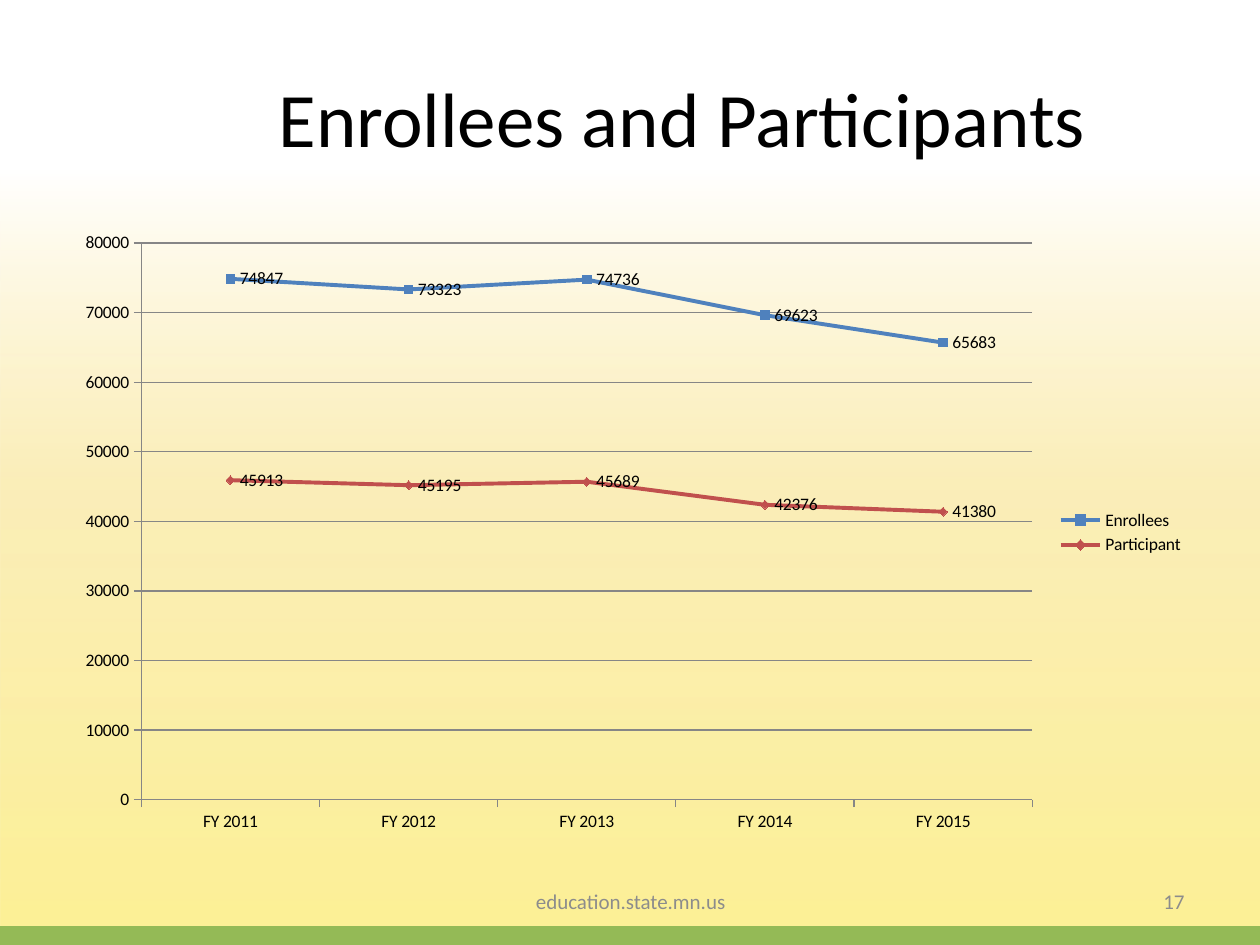
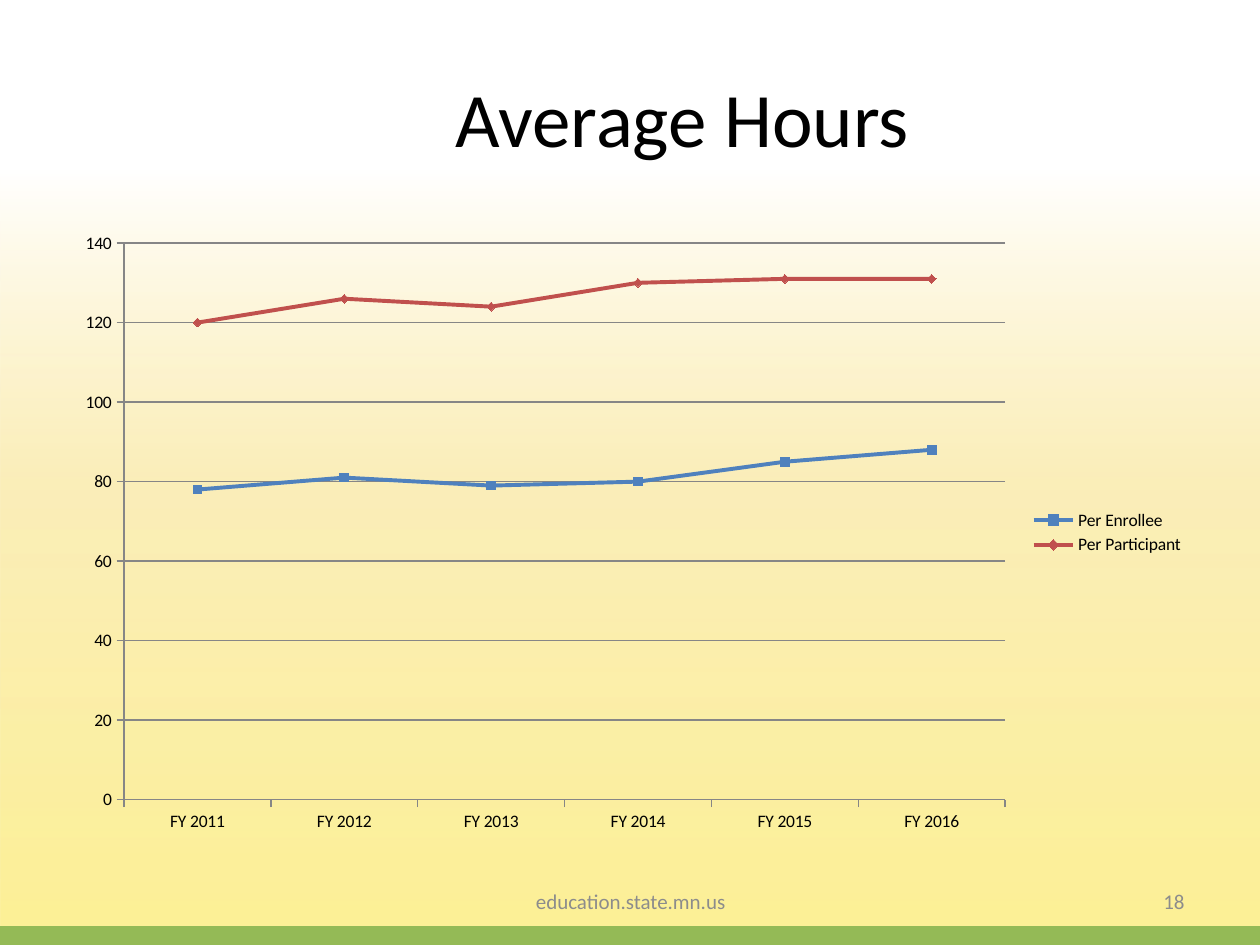
from lxml.etree import SubElement
from pptx import Presentation
from pptx.chart.data import CategoryChartData
from pptx.dml.color import RGBColor
from pptx.enum.chart import XL_CHART_TYPE, XL_LABEL_POSITION, XL_LEGEND_POSITION, XL_MARKER_STYLE, XL_TICK_MARK
from pptx.enum.shapes import MSO_SHAPE
from pptx.enum.text import MSO_ANCHOR, PP_ALIGN
from pptx.oxml.ns import qn
from pptx.util import Cm, Pt

FONT = "Calibri"
BLACK = RGBColor(0x00, 0x00, 0x00)
WHITE = RGBColor(0xFF, 0xFF, 0xFF)
FOOTER_GRAY = RGBColor(0x8C, 0x8C, 0x8C)
AXIS_GRAY = RGBColor(0x86, 0x86, 0x86)
GREEN = RGBColor(0x94, 0xBA, 0x56)
YELLOW = RGBColor(0xFC, 0xEF, 0x8E)
PALE_YELLOW = RGBColor(0xFA, 0xEA, 0xA8)
BLUE = RGBColor(0x4F, 0x81, 0xBD)
RED = RGBColor(0xC0, 0x50, 0x4D)

SLIDE_WIDTH, SLIDE_HEIGHT = Cm(25.4), Cm(19.05)
BAND_HEIGHT = Cm(0.38)
WASH = ((0, YELLOW, 94), (49, PALE_YELLOW, 80), (82, WHITE, 100))
LINE_STYLES = ((BLUE, XL_MARKER_STYLE.SQUARE), (RED, XL_MARKER_STYLE.DIAMOND))


def write(frame, text, size=12, color=BLACK, align=PP_ALIGN.CENTER):
    frame.word_wrap = True
    frame.vertical_anchor = MSO_ANCHOR.MIDDLE
    paragraph = frame.paragraphs[0]
    paragraph.text = text
    paragraph.alignment = align
    paragraph.font.name = FONT
    paragraph.font.size = Pt(size)
    paragraph.font.color.rgb = color


class Deck:
    def __init__(self):
        self.presentation = Presentation()
        self.presentation.slide_width = SLIDE_WIDTH
        self.presentation.slide_height = SLIDE_HEIGHT
        self.slide = None

    def start_slide(self, heading, number):
        self.slide = self.presentation.slides.add_slide(self.presentation.slide_layouts[5])
        self.wash(self.rectangle(0, SLIDE_HEIGHT))
        band = self.rectangle(SLIDE_HEIGHT - BAND_HEIGHT, BAND_HEIGHT)
        band.fill.solid()
        band.fill.fore_color.rgb = GREEN
        self.title(heading)
        self.footer("education.state.mn.us", Cm(8.69), Cm(8.05), PP_ALIGN.CENTER)
        self.footer(str(number), Cm(18.21), Cm(5.92), PP_ALIGN.RIGHT)

    def rectangle(self, top, height):
        area = self.slide.shapes.add_shape(MSO_SHAPE.RECTANGLE, 0, top, SLIDE_WIDTH, height)
        area.shadow.inherit = False
        area.line.fill.background()
        return area

    def wash(self, area):
        area.fill.gradient()
        gradient = area.element.spPr.find(qn("a:gradFill"))
        stops = gradient.find(qn("a:gsLst"))
        for stop in list(stops):
            stops.remove(stop)
        for position, color, opacity in WASH:
            stop = SubElement(stops, qn("a:gs"), pos=str(position * 1000))
            tint = SubElement(stop, qn("a:srgbClr"), val=str(color))
            if opacity < 100:
                SubElement(tint, qn("a:alpha"), val=str(opacity * 1000))
        gradient.find(qn("a:lin")).set("ang", str(270 * 60000))

    def title(self, text):
        heading = self.slide.shapes.title
        heading.left, heading.top = Cm(3.38), Cm(0.76)
        heading.width, heading.height = Cm(20.75), Cm(3.18)
        write(heading.text_frame, text, size=44)
        heading.element.getparent().append(heading.element)

    def footer(self, text, left, width, align):
        note = self.slide.shapes.add_textbox(left, Cm(17.65), width, Cm(1.02))
        write(note.text_frame, text, color=FOOTER_GRAY, align=align)

    def line_chart(self, years, series, top_value, step, labelled=False):
        data = CategoryChartData()
        data.categories = [f"FY {year}" for year in years]
        for name, values in series.items():
            data.add_series(name, values)
        chart = self.slide.shapes.add_chart(
            XL_CHART_TYPE.LINE_MARKERS, Cm(1.27), Cm(4.45), Cm(22.86), Cm(12.57), data
        ).chart
        chart.has_title = False
        chart.font.name = FONT
        chart.font.size = Pt(10)
        chart.font.color.rgb = BLACK
        chart.has_legend = True
        chart.legend.position = XL_LEGEND_POSITION.RIGHT
        chart.legend.include_in_layout = False
        chart.plots[0].vary_by_categories = False
        self.axes(chart, top_value, step)
        for trend, (color, marker) in zip(chart.plots[0].series, LINE_STYLES):
            self.trend(trend, color, marker)
            if labelled:
                labels = trend.data_labels
                labels.show_value = True
                labels.position = XL_LABEL_POSITION.RIGHT

    def axes(self, chart, top_value, step):
        scale = chart.value_axis
        scale.minimum_scale, scale.maximum_scale = 0, top_value
        scale.major_unit = step
        scale.has_major_gridlines = True
        for axis in (chart.category_axis, scale):
            axis.major_tick_mark = XL_TICK_MARK.OUTSIDE
            axis.minor_tick_mark = XL_TICK_MARK.NONE
            axis.tick_labels.number_format = "General"
            axis.tick_labels.number_format_is_linked = False
        for rule in (chart.category_axis.format.line, scale.format.line, scale.major_gridlines.format.line):
            rule.color.rgb = AXIS_GRAY
            rule.width = Pt(0.75)

    def trend(self, trend, color, marker):
        trend.smooth = False
        trend.format.line.color.rgb = color
        trend.format.line.width = Pt(2.25)
        trend.marker.style = marker
        trend.marker.size = 5
        trend.marker.format.fill.solid()
        trend.marker.format.fill.fore_color.rgb = color
        trend.marker.format.line.color.rgb = color


def main():
    deck = Deck()

    deck.start_slide("Enrollees and Participants", 17)
    deck.line_chart(
        range(2011, 2016),
        {
            "Enrollees": (74847, 73323, 74736, 69623, 65683),
            "Participant": (45913, 45195, 45689, 42376, 41380),
        },
        top_value=80000,
        step=10000,
        labelled=True,
    )

    deck.start_slide("Average Hours", 18)
    deck.line_chart(
        range(2011, 2017),
        {
            "Per Enrollee": (78, 81, 79, 80, 85, 88),
            "Per Participant": (120, 126, 124, 130, 131, 131),
        },
        top_value=140,
        step=20,
    )

    deck.presentation.save("out.pptx")


if __name__ == "__main__":
    main()
